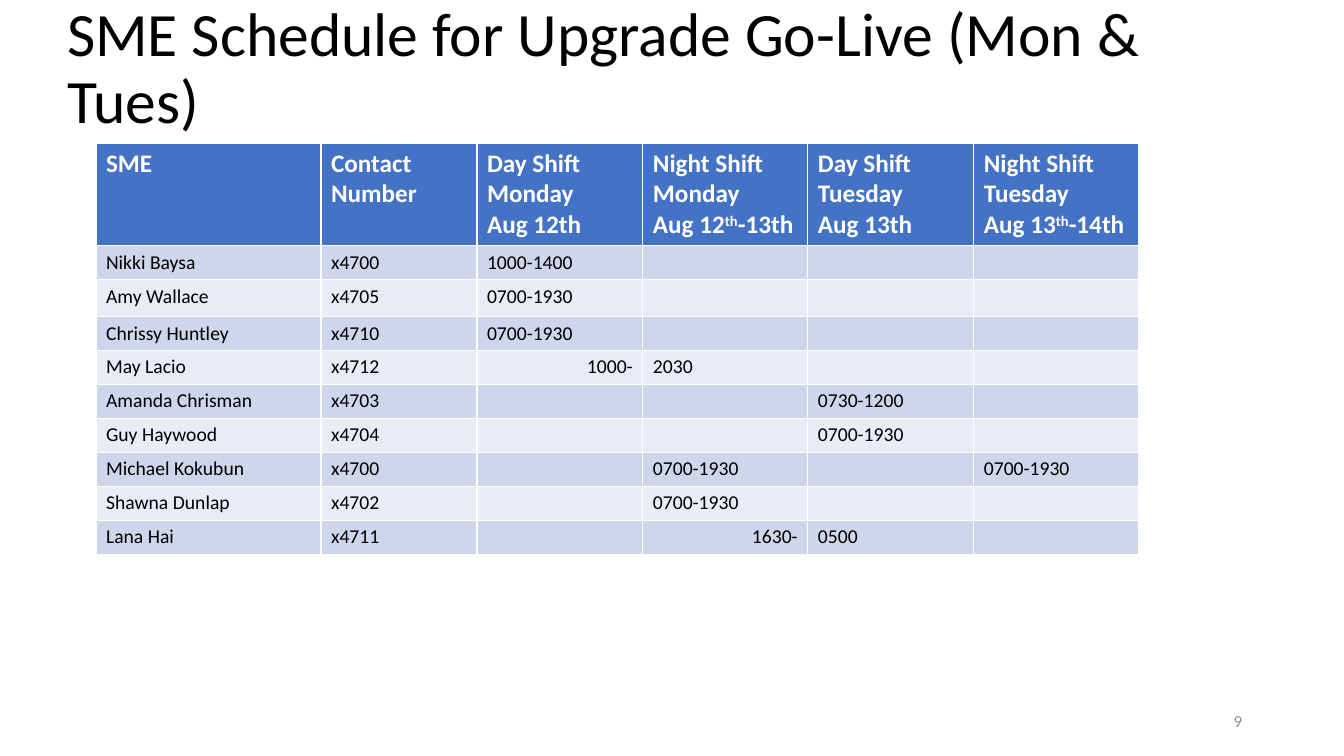
"""Build the SME go-live schedule slide."""
from dataclasses import astuple, dataclass
from itertools import pairwise

from pptx import Presentation
from pptx.dml.color import RGBColor
from pptx.enum.text import MSO_ANCHOR as Anchor, MSO_AUTO_SIZE as AutoSize, PP_ALIGN as Align
from pptx.table import _Cell as Cell
from pptx.text.text import _Paragraph as Paragraph
from pptx.util import Emu, Pt

EMU_PER_PX = 914400 / 100.8
FONT = "Calibri"
BLACK = RGBColor(0x00, 0x00, 0x00)
WHITE = RGBColor(0xFF, 0xFF, 0xFF)
GRAY = RGBColor(0x8C, 0x8C, 0x8C)
HEADER_BLUE = RGBColor(0x44, 0x72, 0xC4)
BANDS = (RGBColor(0xCF, 0xD5, 0xEA), RGBColor(0xE9, 0xEB, 0xF5))


@dataclass
class Sme:
    name: str
    contact: str
    monday_day: str = ""
    monday_night: str = ""
    tuesday_day: str = ""
    tuesday_night: str = ""


HEADERS = (
    "SME",
    "Contact Number",
    "Day Shift\nMonday\nAug 12th",
    "Night Shift\nMonday\nAug 12^th^-13th",
    "Day Shift\nTuesday\nAug 13th",
    "Night Shift\nTuesday\nAug 13^th^-14th",
)
SCHEDULE = (
    Sme("Nikki Baysa", "x4700", monday_day="1000-1400"),
    Sme("Amy Wallace", "x4705", monday_day="0700-1930"),
    Sme("Chrissy Huntley", "x4710", monday_day="0700-1930"),
    Sme("May Lacio", "x4712", monday_day="1000-", monday_night="2030"),
    Sme("Amanda Chrisman", "x4703", tuesday_day="0730-1200"),
    Sme("Guy Haywood", "x4704", tuesday_day="0700-1930"),
    Sme("Michael Kokubun", "x4700", monday_night="0700-1930", tuesday_night="0700-1930"),
    Sme("Shawna Dunlap", "x4702", monday_night="0700-1930"),
    Sme("Lana Hai", "x4711", monday_night="1630-", tuesday_day="0500"),
)
COLUMN_EDGES = (96, 321, 477, 643, 808, 974, 1139)
ROW_EDGES = (143, 245, 279, 316, 350, 384, 418, 452, 486, 520, 553)


def px(length: int) -> Emu:
    return Emu(round(length * EMU_PER_PX))


def style(paragraph: Paragraph, size: int, color: RGBColor,
          align: Align = Align.LEFT, bold: bool = False) -> None:
    paragraph.alignment = align
    font = paragraph.font
    font.name, font.size, font.bold = FONT, Pt(size), bold
    font.color.rgb = color


def fill_cell(cell: Cell, text: str, fill: RGBColor, size: int,
              color: RGBColor, bold: bool = False) -> None:
    cell.fill.solid()
    cell.fill.fore_color.rgb = fill
    frame = cell.text_frame
    align = Align.RIGHT if text.endswith("-") else Align.LEFT
    for line_number, line in enumerate(text.split("\n")):
        paragraph = frame.add_paragraph() if line_number else frame.paragraphs[0]
        style(paragraph, size, color, align, bold)
        for part_number, part in enumerate(line.split("^")):
            if part:
                run = paragraph.add_run()
                run.text = part
                if part_number % 2:
                    run._r.get_or_add_rPr().set("baseline", "30000")


def add_title(slide) -> None:
    title = slide.shapes.title
    title.left, title.top, title.width, title.height = map(px, (57, -3, 1229, 146))
    frame = title.text_frame
    frame.text = "SME Schedule for Upgrade Go-Live (Mon & Tues)"
    frame.auto_size = AutoSize.NONE
    frame.vertical_anchor = Anchor.MIDDLE
    frame.paragraphs[0].line_spacing = 0.9
    style(frame.paragraphs[0], 44, BLACK)


def add_schedule(slide) -> None:
    left, right = COLUMN_EDGES[0], COLUMN_EDGES[-1]
    top, bottom = ROW_EDGES[0], ROW_EDGES[-1]
    table = slide.shapes.add_table(
        len(SCHEDULE) + 1, len(HEADERS),
        px(left), px(top), px(right - left), px(bottom - top)).table
    for column, (start, end) in zip(table.columns, pairwise(COLUMN_EDGES)):
        column.width = px(end - start)
    for row, (start, end) in zip(table.rows, pairwise(ROW_EDGES)):
        row.height = px(end - start)
    for column_number, header in enumerate(HEADERS):
        fill_cell(table.cell(0, column_number), header, HEADER_BLUE, 18, WHITE, bold=True)
    for row_number, sme in enumerate(SCHEDULE):
        for column_number, text in enumerate(astuple(sme)):
            fill_cell(table.cell(row_number + 1, column_number), text,
                      BANDS[row_number % 2], 14, BLACK)


def add_slide_number(slide) -> None:
    frame = slide.shapes.add_textbox(*map(px, (950, 701, 302, 40))).text_frame
    frame.word_wrap = True
    frame.vertical_anchor = Anchor.MIDDLE
    frame.text = "9"
    style(frame.paragraphs[0], 12, GRAY, Align.RIGHT)


def main() -> None:
    presentation = Presentation()
    presentation.slide_width, presentation.slide_height = px(1344), px(756)
    slide = presentation.slides.add_slide(presentation.slide_layouts[5])
    add_title(slide)
    add_schedule(slide)
    add_slide_number(slide)
    presentation.save("out.pptx")


if __name__ == "__main__":
    main()
